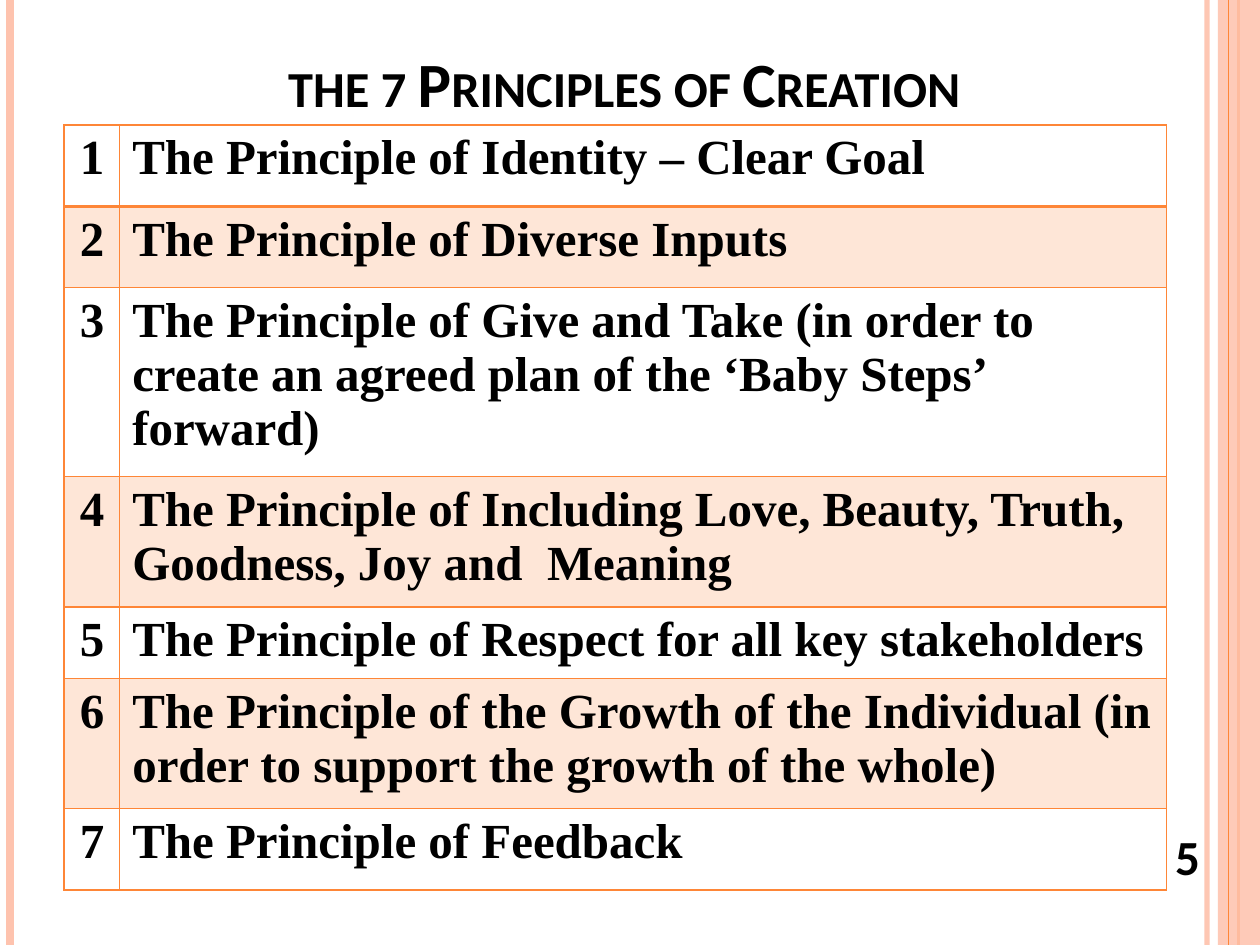
import dataclasses

import lxml.etree
import pptx
import pptx.dml.color
import pptx.enum.shapes
import pptx.enum.text
import pptx.oxml.ns
import pptx.util

Pt = pptx.util.Pt
qn = pptx.oxml.ns.qn
ALIGN = pptx.enum.text.PP_ALIGN
ANCHOR = pptx.enum.text.MSO_ANCHOR

COLOURS = {"orange": "FE8637", "peach": "FEC3AE", "text": "000000"}
HEADING_FONT = "Calibri"
TABLE_FONT = "Times New Roman"
PAGE_WIDTH, PAGE_HEIGHT = 720, 540


@dataclasses.dataclass
class Stripe:
    x: float
    width: float
    colour: str
    opacity: int = 100


@dataclasses.dataclass
class Label:
    text: str
    left: float
    top: float
    width: float
    height: float
    size: float
    anchor: ANCHOR
    small_caps: bool = False


@dataclasses.dataclass
class Principle:
    text: str
    height: float


STRIPES = [
    Stripe(689.8, 3, "peach", 93),
    Stripe(5.8, 4.5, "peach"),
    Stripe(707.8, 1.5, "orange"),
]
FRONT_STRIPE = Stripe(702, 0.75, "orange")

LABELS = [
    Label("the 7 Principles of Creation", 36, 9.4, 641.5, 62.6, 36, ANCHOR.BOTTOM, True),
    Label("5", 645.8, 468.7, 65.5, 41, 28, ANCHOR.MIDDLE),
]

PRINCIPLES = [
    Principle("The Principle of Identity – Clear Goal", 46.5),
    Principle("The Principle of Diverse Inputs", 46.5),
    Principle(
        "The Principle of Give and Take (in order to create an agreed plan "
        "of the ‘Baby Steps’ forward)", 72),
    Principle(
        "The Principle of Including Love, Beauty, Truth, Goodness, Joy and  Meaning", 72),
    Principle("The Principle of Respect for all key stakeholders", 39.6),
    Principle(
        "The Principle of the Growth of the Individual "
        "(in order to support the growth of the whole)", 74.2),
    Principle("The Principle of Feedback", 46.5),
]


def rgb(name: str) -> pptx.dml.color.RGBColor:
    return pptx.dml.color.RGBColor.from_string(COLOURS[name])


def set_opacity(properties, percent: int) -> None:
    colour = next(properties.iter(qn("a:srgbClr")))
    lxml.etree.SubElement(colour, qn("a:alpha"), val=str(percent * 1000))


def style_paragraph(para, font: str, size: float, alignment: ALIGN) -> None:
    para.alignment = alignment
    para.font.name = font
    para.font.size = Pt(size)
    para.font.bold = True
    para.font.color.rgb = rgb("text")


def draw_stripe(page, stripe: Stripe) -> None:
    line = page.shapes.add_connector(
        pptx.enum.shapes.MSO_CONNECTOR.STRAIGHT,
        Pt(stripe.x), Pt(0), Pt(stripe.x), Pt(PAGE_HEIGHT))
    line.line.width = Pt(stripe.width)
    line.line.color.rgb = rgb(stripe.colour)
    properties = line._element.spPr
    if stripe.opacity < 100:
        set_opacity(properties, stripe.opacity)
    lxml.etree.SubElement(properties, qn("a:effectLst"))


def draw_band(page, left: float, opacity: int) -> None:
    band = page.shapes.add_shape(
        pptx.enum.shapes.MSO_SHAPE.RECTANGLE,
        Pt(left), Pt(0), Pt(PAGE_WIDTH - left), Pt(PAGE_HEIGHT))
    band.shadow.inherit = False
    band.fill.solid()
    band.fill.fore_color.rgb = rgb("peach")
    set_opacity(band._element.spPr, opacity)
    band.line.fill.background()


def draw_label(page, label: Label) -> None:
    box = page.shapes.add_textbox(
        Pt(label.left), Pt(label.top), Pt(label.width), Pt(label.height))
    frame = box.text_frame
    frame.word_wrap = True
    frame.vertical_anchor = label.anchor
    para = frame.paragraphs[0]
    style_paragraph(para, HEADING_FONT, label.size, ALIGN.CENTER)
    span = para.add_run()
    span.text = label.text
    if label.small_caps:
        span._r.get_or_add_rPr().set("cap", "small")


def set_borders(cell, widths: dict[str, float]) -> None:
    properties = cell._tc.get_or_add_tcPr()
    for position, (side, width) in enumerate(widths.items()):
        border = lxml.etree.Element(qn(f"a:ln{side}"), w=str(Pt(width)))
        fill = lxml.etree.SubElement(border, qn("a:solidFill"))
        lxml.etree.SubElement(fill, qn("a:srgbClr"), val=COLOURS["orange"])
        properties.insert(position, border)


def draw_table(page, principles: list[Principle]) -> None:
    column_widths = [31.7, 598.3]
    table = page.shapes.add_table(
        len(principles), len(column_widths), Pt(36.7), Pt(71.3),
        Pt(sum(column_widths)), Pt(sum(item.height for item in principles))).table
    table.first_row = False
    table.horz_banding = False
    for column, width in zip(table.columns, column_widths):
        column.width = Pt(width)
    for index, item in enumerate(principles):
        table.rows[index].height = Pt(item.height)
        borders = {"L": 1, "R": 1, "T": 2 if index == 1 else 1, "B": 2 if index == 0 else 1}
        entries = [(str(index + 1), ALIGN.CENTER), (item.text, ALIGN.LEFT)]
        for column, (text, alignment) in enumerate(entries):
            cell = table.cell(index, column)
            cell.text = text
            style_paragraph(cell.text_frame.paragraphs[0], TABLE_FONT, 28, alignment)
            if index % 2:
                cell.fill.solid()
                cell.fill.fore_color.rgb = rgb("orange")
                set_opacity(cell._tc.tcPr, 20)
            else:
                cell.fill.background()
            set_borders(cell, borders)


def main() -> None:
    deck = pptx.Presentation()
    deck.slide_width = Pt(PAGE_WIDTH)
    deck.slide_height = Pt(PAGE_HEIGHT)
    page = deck.slides.add_slide(deck.slide_layouts[6])
    for stripe in STRIPES:
        draw_stripe(page, stripe)
    draw_band(page, 696, 87)
    draw_stripe(page, FRONT_STRIPE)
    title, page_number = LABELS
    draw_label(page, title)
    draw_table(page, PRINCIPLES)
    draw_label(page, page_number)
    deck.save("out.pptx")


if __name__ == "__main__":
    main()
